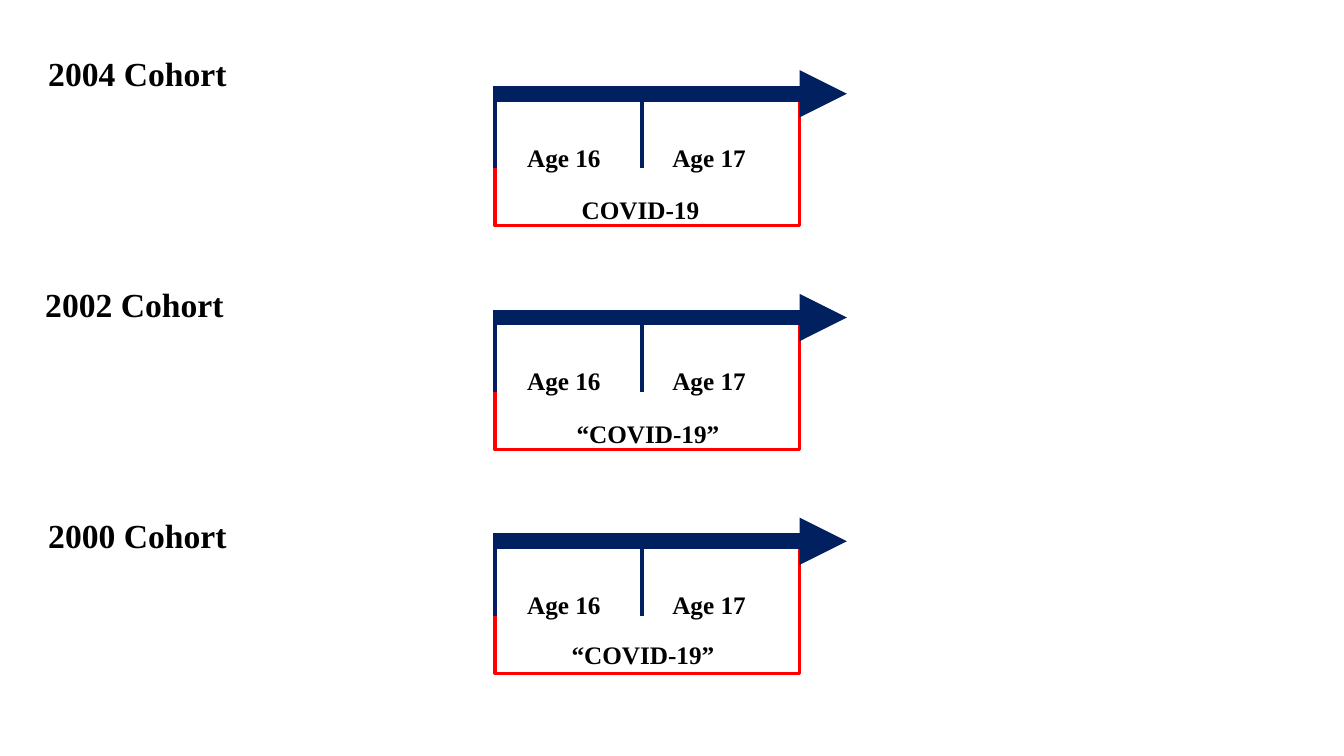
from pptx import Presentation
from pptx.dml.color import RGBColor
from pptx.enum.shapes import MSO_CONNECTOR, MSO_SHAPE
from pptx.enum.text import MSO_AUTO_SIZE
from pptx.oxml.ns import qn
from pptx.util import Inches, Pt
from lxml import etree

STRAIGHT = MSO_CONNECTOR.STRAIGHT
RECTANGLE = MSO_SHAPE.RECTANGLE
GROW = MSO_AUTO_SIZE.SHAPE_TO_FIT_TEXT

FONT = "Times New Roman"
NAVY, RED, WHITE, BLACK = "002060", "FF0000", "FFFFFF", "000000"
FIRST_ARROW_TOP, COHORT_PITCH = 0.93, 2.22
TIMELINE_LEFT, TIMELINE_MIDDLE = 4.91, 6.37

# Cohort name with its left and top, then event with its left and top
COHORTS = [
    ("2004 Cohort", 0.38, 0.48, "COVID-19", 5.67, 1.88),
    ("2002 Cohort", 0.35, 2.77, "“COVID-19”", 5.62, 4.1),
    ("2000 Cohort", 0.38, 5.06, "“COVID-19”", 5.57, 6.29),
]


def color(value):
    """Return the colour for a hex string."""
    return RGBColor.from_string(value)


def add_label(slide, text, left, top, width, height=0.4, size=18):
    """Add a bold text box."""
    box = slide.shapes.add_textbox(Inches(left), Inches(top), Inches(width), Inches(height))
    frame = box.text_frame
    frame.word_wrap = True
    frame.auto_size = GROW
    frame.text = text
    font = frame.paragraphs[0].runs[0].font
    font.name = FONT
    font.size = Pt(size)
    font.bold = True
    font.color.rgb = color(BLACK)


def add_line(slide, start, end, width, arrow=False):
    """Add a navy line, with an arrowhead at its end if asked."""
    line = slide.shapes.add_connector(STRAIGHT, *map(Inches, start + end))
    line.line.color.rgb = color(NAVY)
    line.line.width = Pt(width)
    properties = line.element.spPr
    if arrow:
        etree.SubElement(properties.find(qn("a:ln")), qn("a:tailEnd"), type="triangle")
    etree.SubElement(properties, qn("a:effectLst"))


def add_period(slide, top):
    """Add the red frame around the event."""
    box = slide.shapes.add_shape(
        RECTANGLE, Inches(TIMELINE_LEFT), Inches(top), Inches(3.02), Inches(1.25))
    box.shadow.inherit = False
    box.fill.solid()
    box.fill.fore_color.rgb = color(WHITE)
    box.line.color.rgb = color(RED)
    box.line.width = Pt(2.25)


def add_timeline(slide, top):
    """Add the frame, arrow, ticks and ages of one cohort."""
    add_period(slide, top + 0.06)
    add_line(slide, (4.89, top), (8.4, top), 11.25, arrow=True)
    for x in (TIMELINE_LEFT, TIMELINE_MIDDLE):
        add_line(slide, (x, top + 0.07), (x, top + 0.74), 3)
    for age, left in (("Age 16", 5.13), ("Age 17", 6.57)):
        add_label(slide, age, left, top + 0.43, 1.24)


def main():
    """Build the slide and save the deck."""
    deck = Presentation()
    deck.slide_width, deck.slide_height = Inches(13.33), Inches(7.5)
    slide = deck.slides.add_slide(deck.slide_layouts[6])
    for index, (cohort, left, top, event, event_left, event_top) in enumerate(COHORTS):
        add_timeline(slide, FIRST_ARROW_TOP + index * COHORT_PITCH)
        add_label(slide, cohort, left, top, 2.52, height=0.5, size=24)
        add_label(slide, event, event_left, event_top, 1.71)
    deck.save("out.pptx")


if __name__ == "__main__":
    main()
